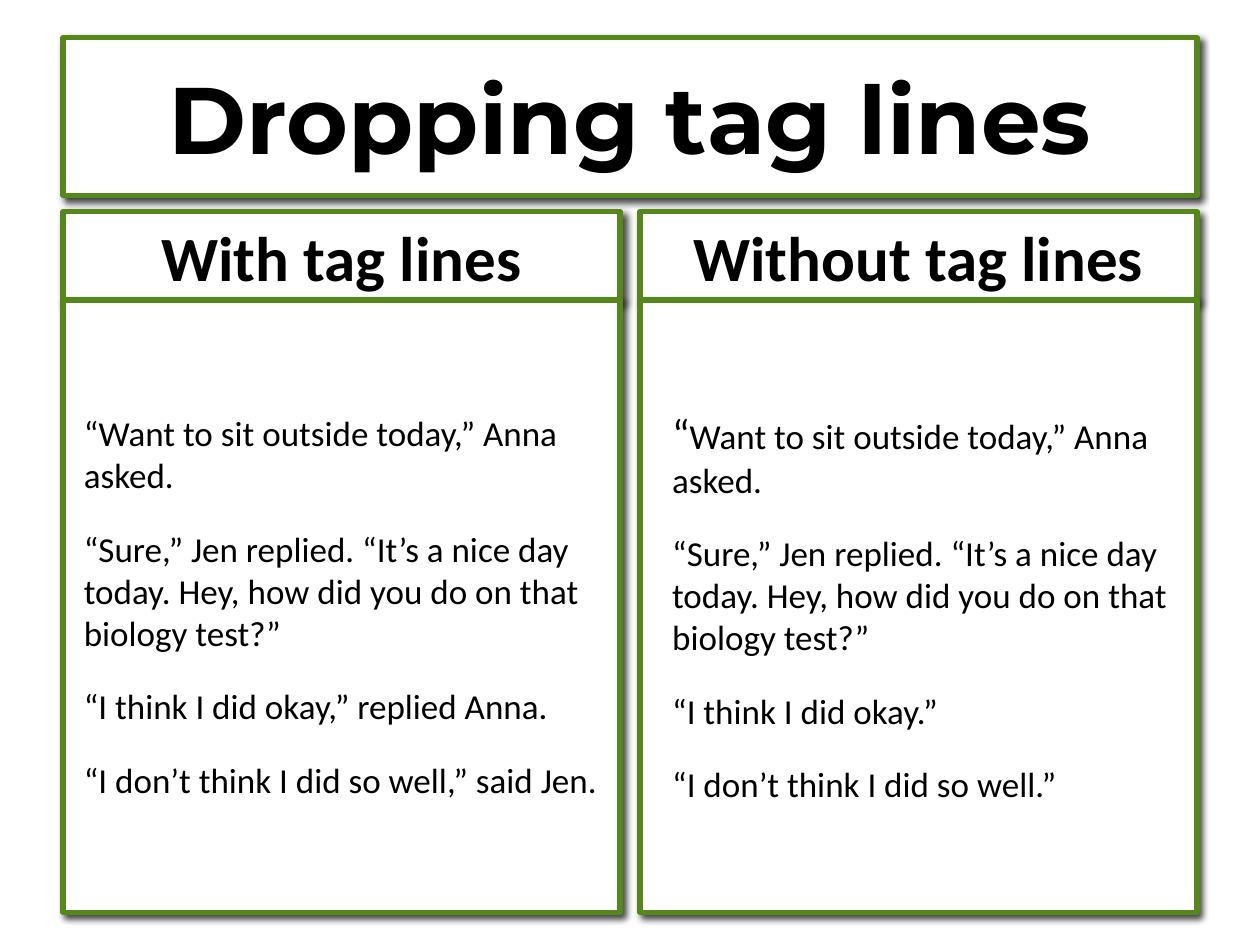
from dataclasses import dataclass

from lxml import etree
from pptx import Presentation
from pptx.dml.color import RGBColor
from pptx.enum.shapes import MSO_SHAPE
from pptx.enum.text import MSO_ANCHOR, PP_ALIGN
from pptx.oxml import parse_xml
from pptx.oxml.ns import nsdecls, qn
from pptx.util import Cm, Pt

RECT = MSO_SHAPE.RECTANGLE
MID, LOW = MSO_ANCHOR.MIDDLE, MSO_ANCHOR.BOTTOM
LEFT, CENTER = PP_ALIGN.LEFT, PP_ALIGN.CENTER


@dataclass(frozen=True)
class Theme:
    ink: str = "000000"
    paper: str = "FFFFFF"
    edge: str = "55871B"
    glow: str = "7AC025"
    head: str = "Montserrat"
    face: str = "Calibri"
    title: int = 54
    label: int = 36
    quote: int = 24
    body: int = 20
    gap: int = 18
    line: int = 3


THEME = Theme()

TITLE = "Dropping tag lines"
OPEN = "Want to sit outside today,” Anna asked."
REPLY = "“Sure,” Jen replied. “It’s a nice day today. Hey, how did you do on that biology test?”"
COLUMNS = [
    ("With tag lines", 0.17, [
        ["“" + OPEN],
        [REPLY],
        ["“I think I did okay,” replied Anna."],
        ["“I don’t think I did so well,” said Jen."],
    ]),
    ("Without tag lines", 0.4, [
        [("“", THEME.quote), OPEN],
        [REPLY],
        ["“I think I did okay.”"],
        ["“I don’t think I did so well.”"],
    ]),
]


def add_shadow(shape):
    blur, dist, turn, alpha = Pt(4), Pt(3), 49 * 60000, 72000
    shape.shadow.inherit = False
    effects = shape._element.spPr.find(qn("a:effectLst"))
    effects.append(parse_xml(
        f'<a:outerShdw {nsdecls("a")} blurRad="{blur}" dist="{dist}" dir="{turn}" '
        f'algn="tl" rotWithShape="0"><a:srgbClr val="{THEME.ink}">'
        f'<a:alpha val="{alpha}"/></a:srgbClr></a:outerShdw>'))


def add_outline(run, color):
    line = etree.Element(qn("a:ln"), w=str(Pt(0.75)))
    fill = etree.SubElement(line, qn("a:solidFill"))
    etree.SubElement(fill, qn("a:srgbClr"), val=color)
    run.font._element.insert(0, line)


def add_panel(slide, left, top, width, height):
    panel = slide.shapes.add_shape(RECT, Cm(left), Cm(top), Cm(width), Cm(height))
    panel.fill.solid()
    panel.fill.fore_color.rgb = RGBColor.from_string(THEME.paper)
    panel.line.color.rgb = RGBColor.from_string(THEME.edge)
    panel.line.width = Pt(THEME.line)
    add_shadow(panel)
    return panel


def write(shape, paras, size, font=THEME.face, bold=False, align=CENTER,
          anchor=MID, after=0, indent=0, outline=None):
    frame = shape.text_frame
    frame.word_wrap = True
    frame.vertical_anchor = anchor
    frame.margin_left = Cm(0.25 + indent)
    for i, parts in enumerate(paras):
        para = frame.add_paragraph() if i else frame.paragraphs[0]
        para.alignment = align
        para.space_after = Pt(after)
        for part in parts:
            text, points = part if isinstance(part, tuple) else (part, size)
            run = para.add_run()
            run.text = text
            run.font.size = Pt(points)
            run.font.name = font
            run.font.bold = bold
            run.font.color.rgb = RGBColor.from_string(THEME.ink)
            if outline:
                add_outline(run, outline)


def add_title(slide, left, top, width, height):
    panel = add_panel(slide, left, top, width, height)
    write(panel, [[TITLE]], THEME.title, font=THEME.head, bold=True,
          outline=THEME.glow)


def add_column(slide, left, top, width, height, label, indent, lines):
    head = 1.78
    panel = add_panel(slide, left, top, width, head)
    write(panel, [[label]], THEME.label, bold=True, anchor=LOW)
    panel = add_panel(slide, left, top + head, width, height - head)
    write(panel, lines, THEME.body, align=LEFT, after=THEME.gap, indent=indent)


def main():
    deck = Presentation()
    deck.slide_width, deck.slide_height = Cm(25.4), Cm(19.05)
    slide = deck.slides.add_slide(deck.slide_layouts[6])
    left, full, gap = 1.27, 22.86, 0.4
    width = (full - gap) / 2
    add_title(slide, left, 0.76, full, 3.18)
    for i, (label, indent, lines) in enumerate(COLUMNS):
        add_column(slide, left + i * (width + gap), 4.27, width, 14.12,
                   label, indent, lines)
    deck.save("out.pptx")


if __name__ == "__main__":
    main()
